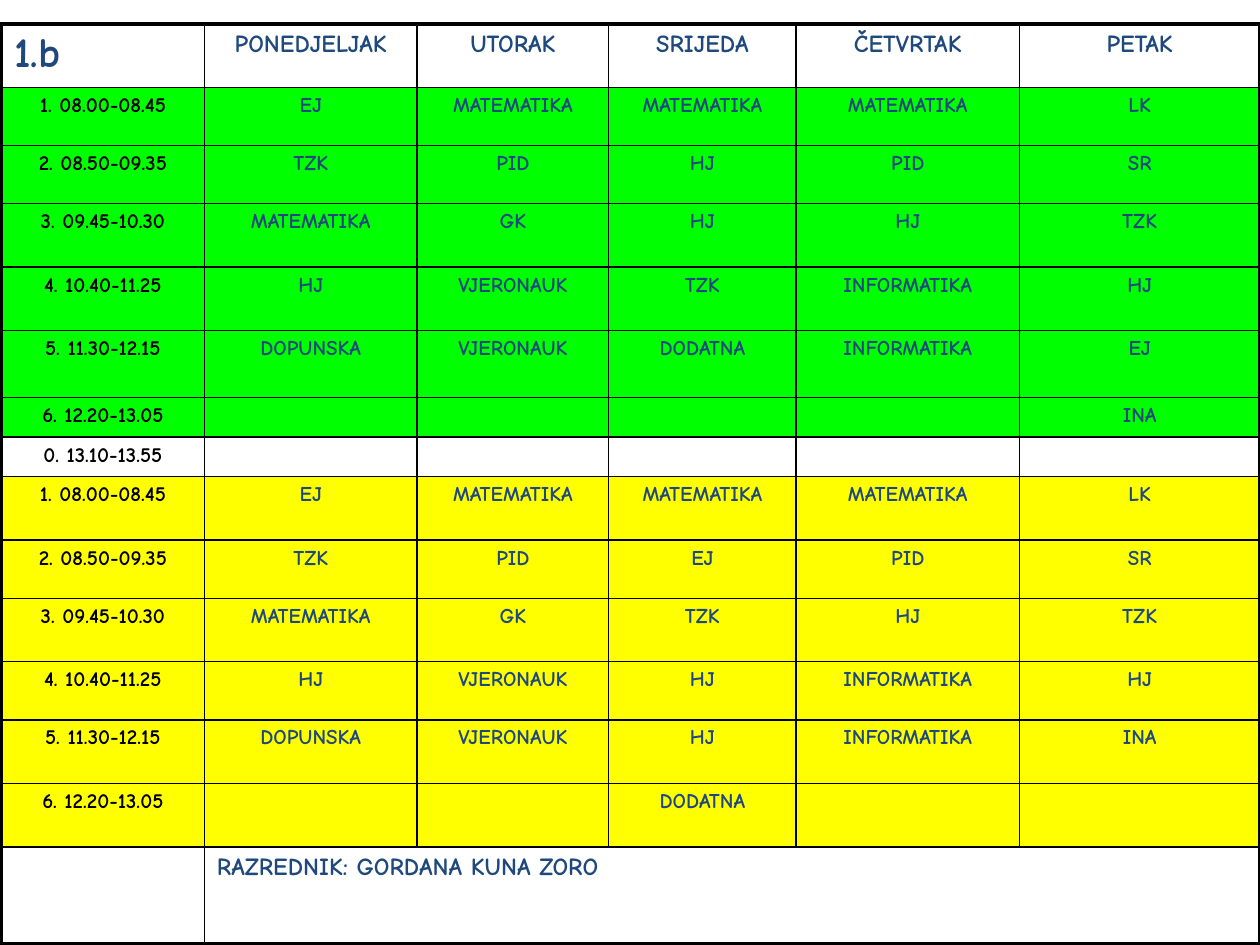
from lxml.etree import SubElement
from pptx import Presentation
from pptx.dml.color import RGBColor
from pptx.enum.text import PP_ALIGN as Align
from pptx.oxml.ns import qn
from pptx.util import Cm, Pt

FONT = "Comic Neue"
NAVY = RGBColor(0x1F, 0x49, 0x7D)
BLACK = RGBColor(0, 0, 0)
GREEN = RGBColor(0, 0xFF, 0)
YELLOW = RGBColor(0xFF, 0xFF, 0)

THIN, THICK = Pt(1), Pt(2.25)
COLUMN_WIDTHS = [4.09, 4.29, 3.86, 3.78, 4.5, 4.85]
ROW_HEIGHTS = [1.28, 1.17, 1.17, 1.28, 1.28, 1.35, 0.8, 0.8,
               1.28, 1.17, 1.28, 1.17, 1.28, 1.28, 1.95]

HEADER = ["1.b", "PONEDJELJAK", "UTORAK", "SRIJEDA", "ČETVRTAK", "PETAK"]
PERIODS = ["1. 08.00-08.45", "2. 08.50-09.35", "3. 09.45-10.30",
           "4. 10.40-11.25", "5. 11.30-12.15", "6. 12.20-13.05"]
BREAK_PERIOD = "0. 13.10-13.55"
TEACHER = "RAZREDNIK: GORDANA KUNA ZORO"

# Each day lists its lessons from the first period to the sixth.
MONDAY = ["EJ", "TZK", "MATEMATIKA", "HJ", "DOPUNSKA", ""]
TUESDAY = ["MATEMATIKA", "PID", "GK", "VJERONAUK", "VJERONAUK", ""]
THURSDAY = ["MATEMATIKA", "PID", "HJ", "INFORMATIKA", "INFORMATIKA", ""]
GREEN_WEDNESDAY = ["MATEMATIKA", "HJ", "HJ", "TZK", "DODATNA", ""]
GREEN_FRIDAY = ["LK", "SR", "TZK", "HJ", "EJ", "INA"]
YELLOW_WEDNESDAY = ["MATEMATIKA", "EJ", "TZK", "HJ", "HJ", "DODATNA"]
YELLOW_FRIDAY = ["LK", "SR", "TZK", "HJ", "INA", ""]


def shift_rows(wednesday, friday):
    days = zip(PERIODS, MONDAY, TUESDAY, wednesday, THURSDAY, friday)
    return [list(row) for row in days]


def set_borders(cell, left, right, top, bottom):
    properties = cell._tc.get_or_add_tcPr()
    for side, width in zip("LRTB", (left, right, top, bottom)):
        line = SubElement(properties, qn(f"a:ln{side}"), w=str(width))
        fill = SubElement(line, qn("a:solidFill"))
        SubElement(fill, qn("a:srgbClr"), val=str(BLACK))


def set_fill(cell, color):
    if color is None:
        cell.fill.background()
    else:
        cell.fill.solid()
        cell.fill.fore_color.rgb = color


def set_text(cell, text, size, color, align=Align.CENTER):
    para = cell.text_frame.paragraphs[0]
    para.alignment = align
    if not text:
        # Keeps an empty cell from stretching its row.
        SubElement(para._p, qn("a:endParaRPr"), sz=str(size * 100))
        return
    para.text = text
    font = para.runs[0].font
    font.name, font.size, font.bold = FONT, Pt(size), True
    font.color.rgb = color


def add_grid(slide):
    rows, columns = len(ROW_HEIGHTS), len(COLUMN_WIDTHS)
    frame = slide.shapes.add_table(rows, columns, Cm(0.03), Cm(0.48),
                                   Cm(sum(COLUMN_WIDTHS)), Cm(sum(ROW_HEIGHTS)))
    table = frame.table
    table.first_row = table.horz_banding = False
    for column, width in zip(table.columns, COLUMN_WIDTHS):
        column.width = Cm(width)
    for row, height in zip(table.rows, ROW_HEIGHTS):
        row.height = Cm(height)
    table.cell(rows - 1, 1).merge(table.cell(rows - 1, columns - 1))
    for r, row in enumerate(table.rows):
        for c, cell in enumerate(row.cells):
            at_right = c == columns - 1 or cell.is_merge_origin
            set_borders(cell,
                        left=THICK if c == 0 else THIN,
                        right=THICK if at_right else THIN,
                        top=THICK if r == 0 else THIN,
                        bottom=THICK if r == rows - 1 else THIN)
    return table


def fill_timetable(table):
    blank = [""] * 5
    green = shift_rows(GREEN_WEDNESDAY, GREEN_FRIDAY)
    yellow = shift_rows(YELLOW_WEDNESDAY, YELLOW_FRIDAY)
    contents = [HEADER, *green, [BREAK_PERIOD, *blank], *yellow,
                ["", TEACHER, *blank[1:]]]
    fills = [None, *[GREEN] * len(green), None, *[YELLOW] * len(yellow), None]
    last = len(contents) - 1
    for r, (texts, fill) in enumerate(zip(contents, fills)):
        for c, text in enumerate(texts):
            cell = table.cell(r, c)
            set_fill(cell, fill)
            if (r, c) == (0, 0):
                set_text(cell, text, 24, NAVY, Align.LEFT)
            elif r == 0:
                set_text(cell, text, 14, NAVY)
            elif r == last:
                set_text(cell, text, 14, NAVY, Align.LEFT)
            else:
                set_text(cell, text, 12, BLACK if c == 0 else NAVY)


def main():
    deck = Presentation()
    deck.slide_width, deck.slide_height = Cm(25.4), Cm(19.05)
    slide = deck.slides.add_slide(deck.slide_layouts[6])
    fill_timetable(add_grid(slide))
    deck.save("out.pptx")


if __name__ == "__main__":
    main()
